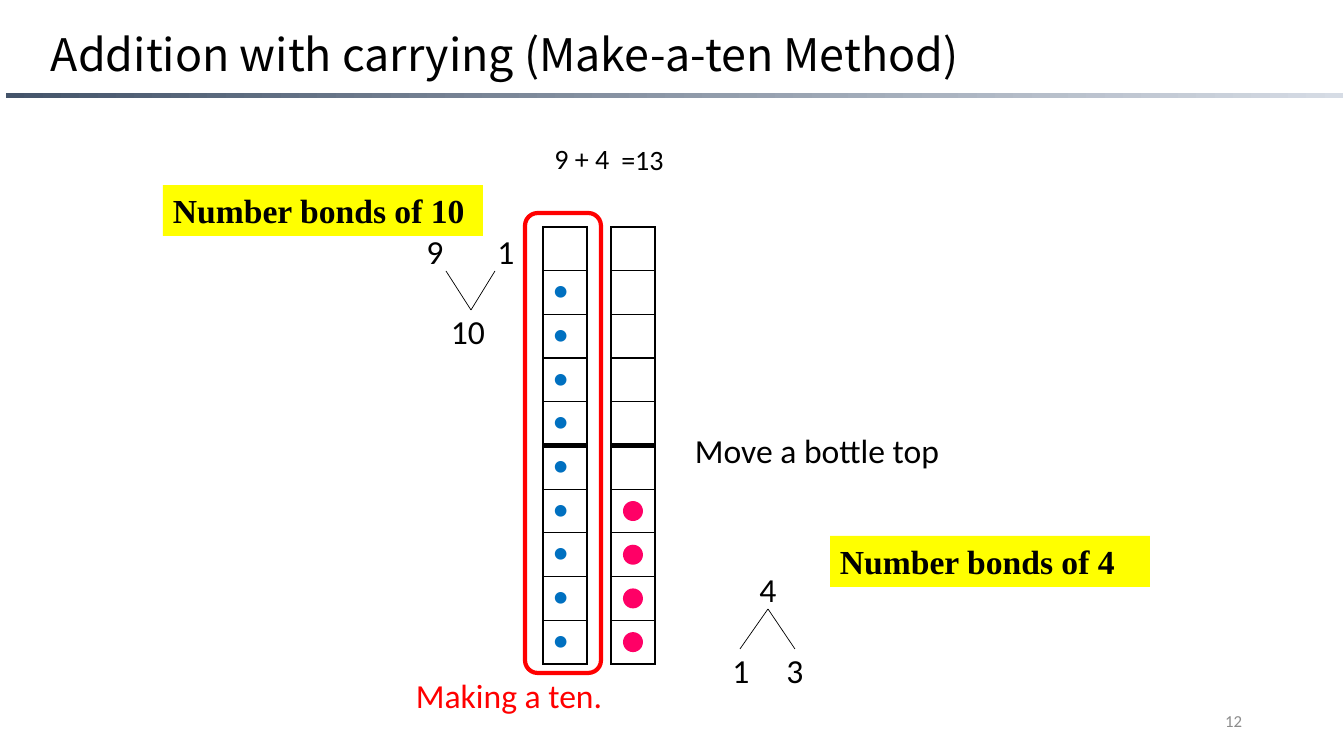
from lxml import etree
from pptx import Presentation
from pptx.dml.color import RGBColor
from pptx.enum.shapes import MSO_CONNECTOR, MSO_SHAPE as SHAPE
from pptx.enum.text import MSO_ANCHOR as ANCHOR, PP_ALIGN as ALIGN
from pptx.oxml.ns import qn
from pptx.util import Pt

PX = 12192000 / 1344
BLACK, RED, PINK, BLUE, YELLOW = "000000", "FF0000", "FF0066", "0070C0", "FFFF00"
LEFT, CENTER, RIGHT = ALIGN.LEFT, ALIGN.CENTER, ALIGN.RIGHT
SANS, SERIF, TITLE_FONT = "Calibri", "Times New Roman", "Noto Sans CJK JP"

TITLE = "Addition with carrying (Make-a-ten Method)"
LABELS = [
    ("9 + 4", (516, 137, 132, 44), 20, BLACK, CENTER),
    ("=13", (609, 138, 67, 44), 20, BLACK, CENTER),
    ("Move a bottle top", (685, 425, 283, 50), 24, BLACK, LEFT),
    ("Making a ten.", (406, 670, 352, 50), 24, RED, LEFT),
]
HEADINGS = [
    ("Number bonds of 10", (163, 185, 320, 51)),
    ("Number bonds of 4", (830, 536, 320, 51)),
]
BOND_NUMBERS = [
    ("9", 435, 226), ("1", 506, 226), ("10", 468, 306),
    ("4", 768, 564), ("1", 741, 645), ("3", 795, 645),
]
BOND_LINES = [
    (446, 271, 471, 310), (495, 271, 471, 310),
    (768, 609, 740, 649), (768, 609, 795, 649),
]
ROWS, CELL_W, FRAME_TOP, FRAME_H = 10, 44, 227, 437
FRAMES = [(543, ["", *["●"] * 9]), (611, [""] * ROWS)]
TOP_SIZE, TOP_CENTER, TOP_ROWS = 20, 633, range(6, 10)


def px(*values):
    return [round(v * PX) for v in values]


def rgb(color):
    return RGBColor.from_string(color)


def write(tf, text, size, color=BLACK, font=SANS, align=LEFT, bold=False):
    p = tf.paragraphs[0]
    p.alignment = align
    r = p.add_run()
    r.text = text
    r.font.size, r.font.name, r.font.bold = Pt(size), font, bold
    r.font.color.rgb = rgb(color)
    return p


def add_text(box, text, size, color=BLACK, align=LEFT, font=SANS, anchor=ANCHOR.TOP):
    tf = s.shapes.add_textbox(*px(*box)).text_frame
    tf.word_wrap = True
    tf.vertical_anchor = anchor
    return write(tf, text, size, color, font, align)


def add_shape(kind, box, fill=None, line=None):
    sp = s.shapes.add_shape(kind, *px(*box))
    sp.shadow.inherit = False
    if fill:
        sp.fill.solid()
        sp.fill.fore_color.rgb = rgb(fill)
    else:
        sp.fill.background()
    if line:
        sp.line.color.rgb = rgb(line)
        sp.line.width = Pt(3)
    else:
        sp.line.fill.background()
    return sp


def add_line(ends):
    line = s.shapes.add_connector(MSO_CONNECTOR.STRAIGHT, *px(*ends))
    line.line.color.rgb = rgb(BLACK)
    line.line.width = Pt(0.5)
    etree.SubElement(line._element.spPr, qn("a:effectLst"))


def set_borders(cell, widths):
    tc_pr = cell._tc.get_or_add_tcPr()
    for side, width in widths.items():
        ln = etree.SubElement(tc_pr, qn(f"a:ln{side}"), w=str(Pt(width)))
        fill = etree.SubElement(ln, qn("a:solidFill"))
        etree.SubElement(fill, qn("a:srgbClr"), val=BLACK)


def add_frame(left, marks):
    box = px(left, FRAME_TOP, CELL_W, FRAME_H)
    table = s.shapes.add_table(ROWS, 1, *box).table
    table.first_row = table.horz_banding = False
    half = ROWS // 2
    for i, mark in enumerate(marks):
        table.rows[i].height = round(FRAME_H * PX / ROWS)
        cell = table.cell(i, 0)
        set_borders(cell, {"L": 1, "R": 1, "T": 4.5 if i == half else 1,
                           "B": 4.5 if i == half - 1 else 1})
        cell.fill.background()
        if mark:
            write(cell.text_frame, mark, 18, BLUE)


prs = Presentation()
prs.slide_width, prs.slide_height = px(1344, 756)
s = prs.slides.add_slide(prs.slide_layouts[6])

rule = add_shape(SHAPE.RECTANGLE, (6, 93, 1337, 5))
rule.fill.gradient()
rule.fill.gradient_angle = 0
for stop, color, position in zip(rule.fill.gradient_stops, ("44546A", "D6DCE5"), (0, 1)):
    stop.color.rgb = rgb(color)
    stop.position = position

p = add_text((41, 32, 1159, 49), TITLE, 32, font=TITLE_FONT, anchor=ANCHOR.MIDDLE)
p.line_spacing = 0.9
add_text((950, 701, 302, 40), "12", 12, "8C8C8C", RIGHT, anchor=ANCHOR.MIDDLE)

for left, marks in FRAMES:
    add_frame(left, marks)
for row in TOP_ROWS:
    middle = FRAME_TOP + (row + 0.5) * FRAME_H / ROWS
    corner = (TOP_CENTER - TOP_SIZE / 2, middle - TOP_SIZE / 2)
    add_shape(SHAPE.OVAL, (*corner, TOP_SIZE, TOP_SIZE), PINK)

for text, box in HEADINGS:
    tf = add_shape(SHAPE.RECTANGLE, box, YELLOW).text_frame
    tf.word_wrap = True
    tf.vertical_anchor = ANCHOR.TOP
    write(tf, text, 24, font=SERIF, bold=True)
for text, center, top in BOND_NUMBERS:
    add_text((center - 30, top, 60, 50), text, 24, align=CENTER)
for ends in BOND_LINES:
    add_line(ends)
for text, box, size, color, align in LABELS:
    add_text(box, text, size, color, align)
add_shape(SHAPE.ROUNDED_RECTANGLE, (525, 213, 76, 460), line=RED)

prs.save("out.pptx")
